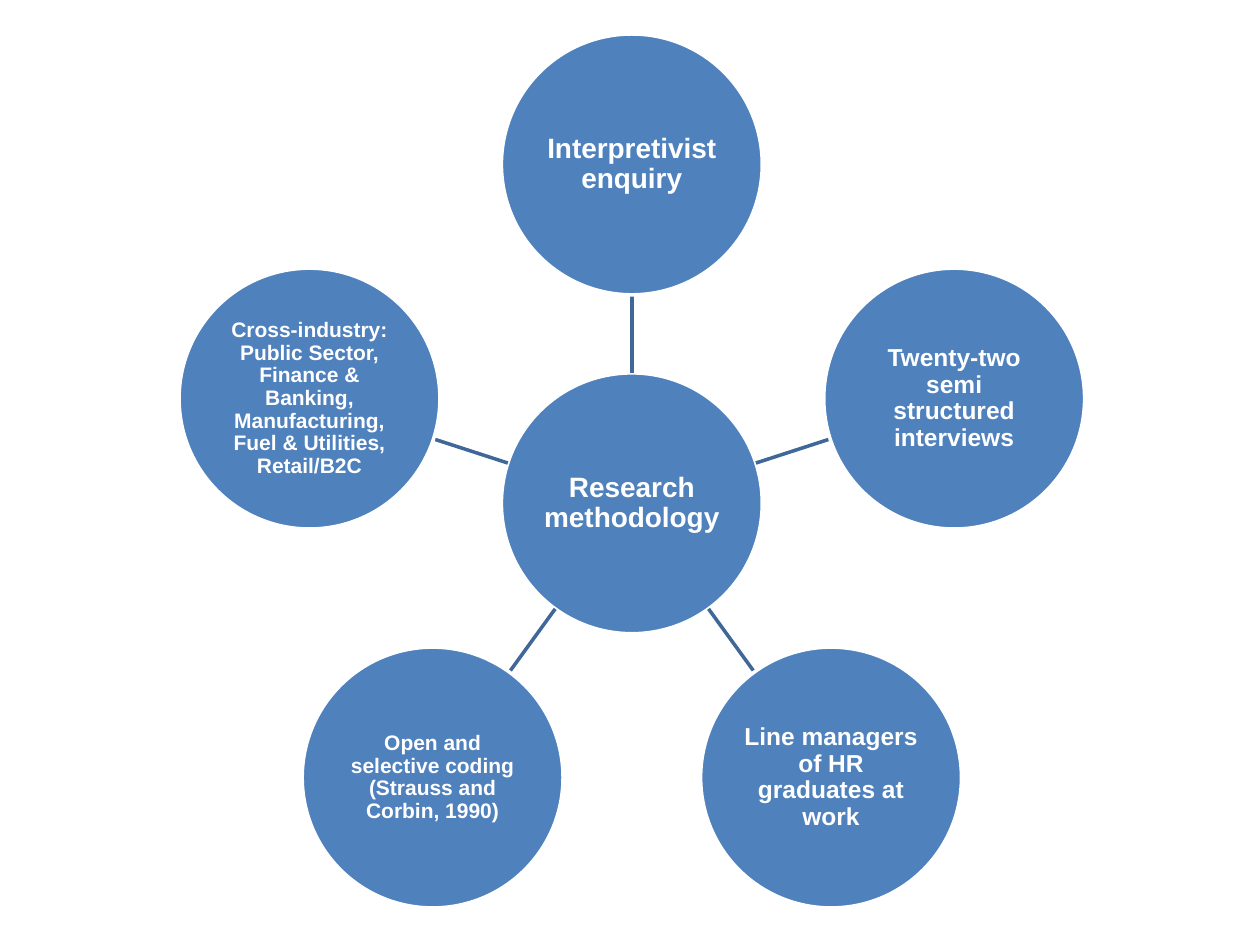
"""Build a radial diagram of a research methodology with five linked circles."""
from dataclasses import dataclass
from math import cos, radians, sin

from pptx import Presentation
from pptx.dml.color import RGBColor
from pptx.enum import shapes, text
from pptx.oxml.ns import qn
from pptx.util import Inches, Pt

HUB_X, HUB_Y = 5.015, 3.995
DIAMETER = 2.07
ORBIT = 2.69
BLUE, SPOKE_BLUE, WHITE = "4F81BD", "3F6797", "FFFFFF"


@dataclass
class Topic:
    label: str
    size: int


HUB = Topic("Research methodology", 16)
TOPICS = [
    Topic("Interpretivist enquiry", 16),
    Topic("Twenty-two semi structured interviews", 14),
    Topic("Line managers of HR graduates at work", 14),
    Topic("Open and selective coding (Strauss and Corbin, 1990)", 12),
    Topic("Cross-industry: Public Sector, Finance & Banking, Manufacturing, "
          "Fuel & Utilities, Retail/B2C", 12),
]


def color(value: str) -> RGBColor:
    return RGBColor.from_string(value)


def on_ray(angle: float, distance: float) -> tuple[float, float]:
    return HUB_X + distance * cos(angle), HUB_Y + distance * sin(angle)


def write(frame, label: str, *, size: int, font: str = "Arial",
          fill: str = WHITE, bold: bool = True) -> None:
    frame.word_wrap = True
    frame.vertical_anchor = text.MSO_ANCHOR.MIDDLE
    frame.margin_left = frame.margin_right = Inches(0.01)
    frame.margin_top = frame.margin_bottom = Inches(0.01)
    paragraph = frame.paragraphs[0]
    paragraph.alignment = text.PP_ALIGN.CENTER
    paragraph.line_spacing = 0.9
    run = paragraph.add_run()
    run.text = label
    run.font.name = font
    run.font.size = Pt(size)
    run.font.bold = bold
    run.font.color.rgb = color(fill)


def draw_circle(slide, topic: Topic, x: float, y: float) -> None:
    circle = slide.shapes.add_shape(
        shapes.MSO_SHAPE.OVAL, Inches(x - DIAMETER / 2),
        Inches(y - DIAMETER / 2), Inches(DIAMETER), Inches(DIAMETER))
    circle.shadow.inherit = False
    circle.fill.solid()
    circle.fill.fore_color.rgb = color(BLUE)
    circle.line.color.rgb = color(WHITE)
    circle.line.width = Pt(2)
    write(circle.text_frame, topic.label, size=topic.size)


def draw_spoke(slide, angle: float) -> None:
    ends = (*on_ray(angle, DIAMETER / 2), *on_ray(angle, ORBIT - DIAMETER / 2))
    spoke = slide.shapes.add_connector(
        shapes.MSO_CONNECTOR.STRAIGHT, *(Inches(end) for end in ends))
    spoke.line.color.rgb = color(SPOKE_BLUE)
    spoke.line.width = Pt(2)
    properties = spoke._element.spPr
    properties.append(properties.makeelement(qn("a:effectLst"), {}))


def main() -> None:
    deck = Presentation()
    deck.slide_width, deck.slide_height = Inches(10), Inches(7.5)
    slide = deck.slides.add_slide(deck.slide_layouts[6])
    draw_circle(slide, HUB, HUB_X, HUB_Y)
    for index, topic in enumerate(TOPICS):
        angle = radians(index * 360 / len(TOPICS) - 90)
        draw_spoke(slide, angle)
        draw_circle(slide, topic, *on_ray(angle, ORBIT))
    deck.save("out.pptx")


if __name__ == "__main__":
    main()
